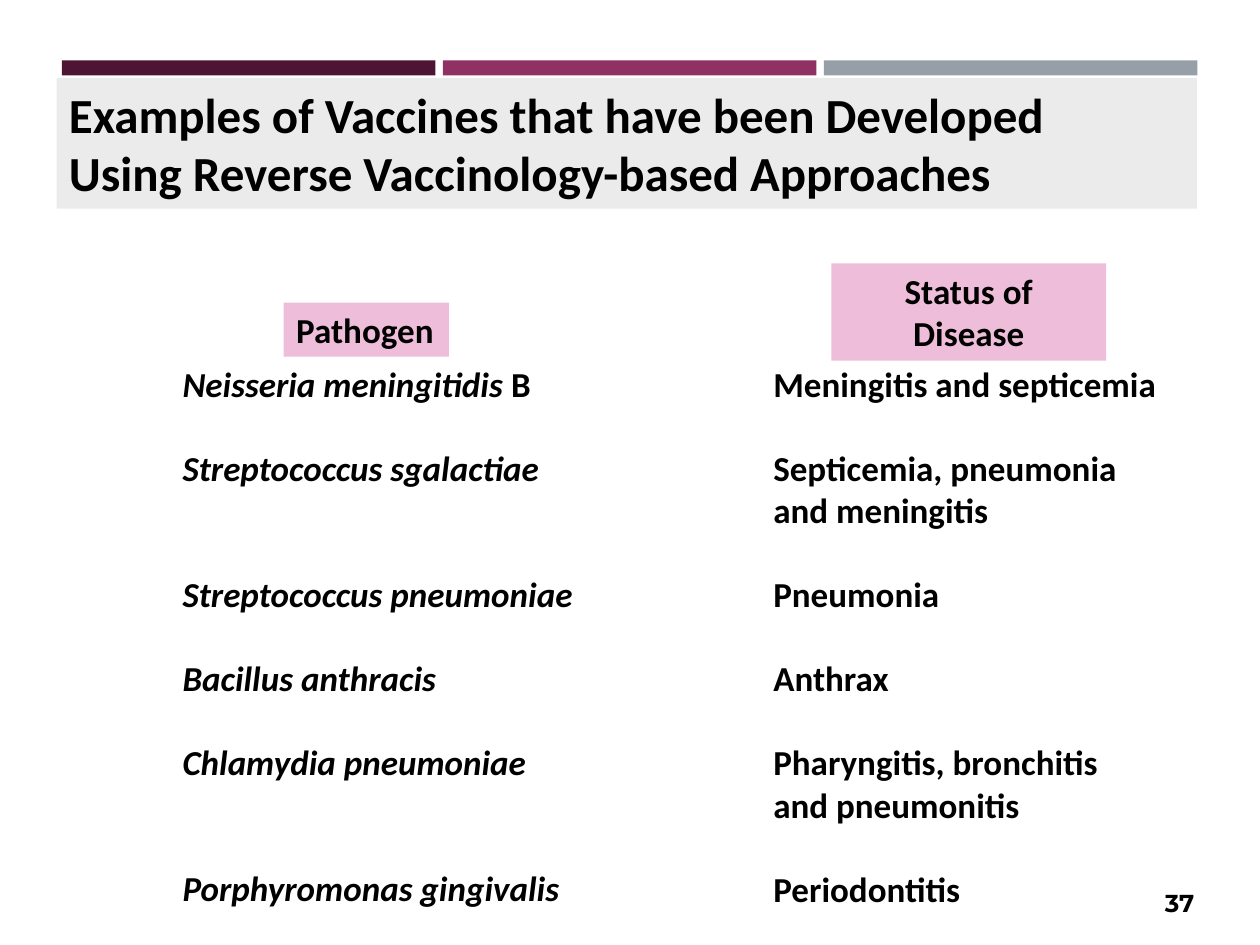
from pptx import Presentation
from pptx.dml.color import RGBColor
from pptx.enum.shapes import MSO_SHAPE as Shape
from pptx.enum.text import MSO_ANCHOR as Anchor, PP_ALIGN as Align
from pptx.util import Cm, Pt

COLORS = {
    "plum": "4D1434",
    "magenta": "903163",
    "steel": "969FA7",
    "title": "EBEBEB",
    "heading": "EEBDD9",
    "text": "000000",
}

# Pathogen species, upright suffix, lines describing the disease
VACCINES = [
    ("Neisseria meningitidis", " B", ["Meningitis and septicemia"]),
    ("Streptococcus sgalactiae", "", ["Septicemia, pneumonia", "and meningitis"]),
    ("Streptococcus pneumoniae", "", ["Pneumonia"]),
    ("Bacillus anthracis", "", ["Anthrax"]),
    ("Chlamydia pneumoniae", "", ["Pharyngitis, bronchitis", "and pneumonitis"]),
    ("Porphyromonas gingivalis", "", ["Periodontitis"]),
]
LINE = 24  # height of one body line in points


def add_rect(page, color, left, top, width, height):
    box = page.shapes.add_shape(
        Shape.RECTANGLE, Cm(left), Cm(top), Cm(width), Cm(height))
    box.shadow.inherit = False
    box.fill.solid()
    box.fill.fore_color.rgb = RGBColor.from_string(COLORS[color])
    box.line.fill.background()
    return box


def add_text_box(page, left, top, width, height):
    return page.shapes.add_textbox(Cm(left), Cm(top), Cm(width), Cm(height))


def format_span(span, size=20, name="Calibri", italic=False):
    span.font.size = Pt(size)
    span.font.name = name
    span.font.bold = True
    span.font.italic = italic
    span.font.color.rgb = RGBColor.from_string(COLORS["text"])


def write_lines(box, lines, size=20, name="Calibri", align=Align.LEFT,
                italic=False, wrap=True):
    frame = box.text_frame
    frame.text = "\n".join(lines)
    frame.word_wrap = wrap
    frame.vertical_anchor = Anchor.TOP
    for para in frame.paragraphs:
        para.alignment = align
        for span in para.runs:
            format_span(span, size, name, italic)
    return frame.paragraphs


def add_pathogens(page):
    box = add_text_box(page, 3.43, 7.19, 8.43, 11.38)
    paras = write_lines(box, [species for species, _, _ in VACCINES], italic=True)
    for para, (_, suffix, _) in zip(paras, VACCINES):
        if suffix:
            span = para.add_run()
            span.text = suffix
            format_span(span)
    # Leave room for every disease line of the row above
    for para, (_, _, disease) in zip(paras[1:], VACCINES):
        para.space_before = Pt(LINE * len(disease))


def add_diseases(page):
    box = add_text_box(page, 15.34, 7.19, 8.38, 11.25)
    paras = write_lines(box, [line for _, _, disease in VACCINES for line in disease])
    first = 0
    for _, _, disease in VACCINES[:-1]:
        first += len(disease)
        paras[first].space_before = Pt(LINE)


def main():
    deck = Presentation()
    deck.slide_width, deck.slide_height = Cm(25.4), Cm(19.05)
    page = deck.slides.add_slide(deck.slide_layouts[6])

    # Colour bars
    for index, color in enumerate(["plum", "magenta", "steel"]):
        add_rect(page, color, 1.25 + index * 7.68, 1.22, 7.53, 0.3)

    # Title
    title = add_rect(page, "title", 1.14, 1.57, 22.99, 2.64)
    write_lines(title, ["Examples of Vaccines that have been Developed",
                        "Using Reverse Vaccinology-based Approaches"], size=28)

    # Column headings
    pathogen = add_rect(page, "heading", 5.72, 6.1, 3.33, 1.09)
    write_lines(pathogen, ["Pathogen"], wrap=False)
    status = add_rect(page, "heading", 16.76, 5.31, 5.54, 1.96)
    write_lines(status, ["Status of", "Disease"], align=Align.CENTER)

    # Columns
    add_pathogens(page)
    add_diseases(page)

    # Page number
    number = add_text_box(page, 11.63, 17.78, 12.7, 0.86)
    write_lines(number, ["37"], size=14, name="Montserrat", align=Align.RIGHT)

    deck.save("out.pptx")


if __name__ == "__main__":
    main()
